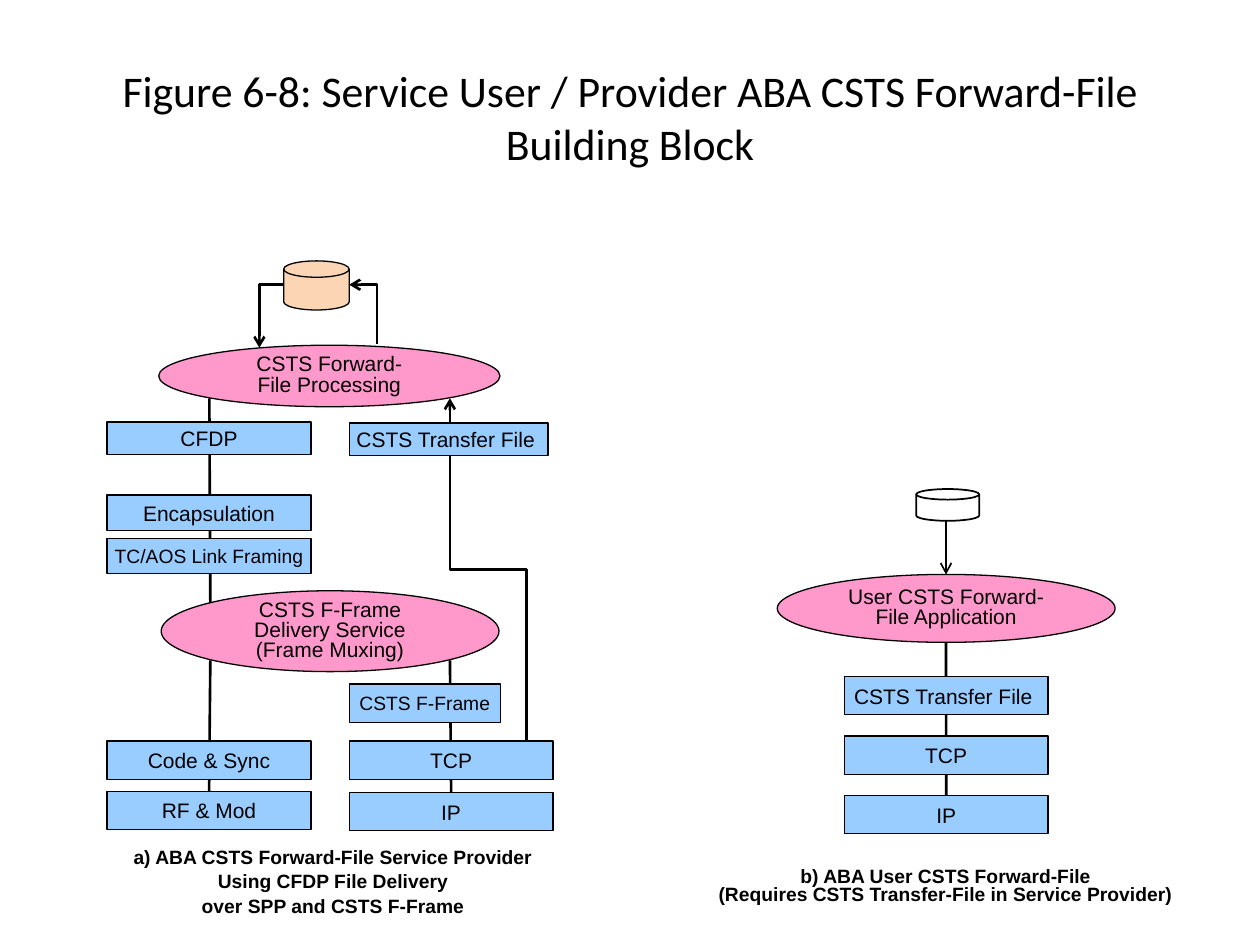
from lxml import etree
from pptx import Presentation
from pptx.dml.color import RGBColor
from pptx.enum import shapes, text
from pptx.oxml.ns import qn
from pptx.util import Cm, Pt

COLORS = {"black": "000000", "pink": "FF99CC", "blue": "99CCFF",
          "peach": "FCD5B5", "white": "FFFFFF"}

# Content; all lengths are centimetres
TITLE = "Figure 6-8: Service User / Provider ABA CSTS Forward-File Building Block"
CAPTIONS = [  # lines, area, line spacing
    (["a) ABA CSTS Forward-File Service Provider",
      "Using CFDP File Delivery\vover SPP and CSTS F-Frame"],
     (2.41, 16.87, 8.61, 1.75), Pt(14)),
    (["b) ABA User CSTS Forward-File",
      "(Requires CSTS Transfer-File in Service Provider)"],
     (14.2, 17.37, 9.73, 1.02), 0.8),
]
PROCESSES = [  # lines, area
    (["CSTS Forward-", "File Processing"], (3.2, 6.96, 6.88, 1.24)),
    (["CSTS F-Frame", "Delivery Service", "(Frame Muxing)"],
     (3.25, 11.91, 6.81, 1.63)),
    (["User CSTS Forward-", "File Application"], (15.67, 11.58, 6.81, 1.37)),
]
STORES = [  # area, fill, line width
    ((5.72, 5.26, 1.32, 0.99), "peach", 0.75),
    ((18.47, 9.86, 1.27, 0.64), "white", 1),
]
LEFT, MIDDLE, RIGHT = 2.16, 7.04, 17.02
WIDE, TALL = 4.11, 0.77
USER_TOP, USER_STEP = 13.64, 1.2
LAYERS = [  # key, label, x, y, width, height, text size
    ("cfdp", "CFDP", LEFT, 8.51, WIDE, 0.66, 12),
    ("encapsulation", "Encapsulation", LEFT, 9.98, WIDE, 0.71, 12),
    ("framing", "TC/AOS Link Framing", LEFT, 10.85, WIDE, 0.71, 11),
    ("coding", "Code & Sync", LEFT, 14.94, WIDE, TALL, 12),
    ("radio", "RF & Mod", LEFT, 15.95, WIDE, TALL, 12),
    ("transfer", "CSTS Transfer File ", MIDDLE, 8.53, 4.01, 0.66, 12),
    ("frame", "CSTS F-Frame", MIDDLE, 13.79, 3.05, TALL, 11),
    ("tcp", "TCP", MIDDLE, 14.94, WIDE, TALL, 12),
    ("ip", "IP", MIDDLE, 15.98, WIDE, TALL, 12),
] + [
    (f"user {label}", label, RIGHT, USER_TOP + row * USER_STEP, WIDE, TALL, 12)
    for row, label in enumerate(["CSTS Transfer File ", "TCP", "IP"])
]
SPINES = [  # start, layer whose top the line reaches
    ((4.24, 13.31), "radio"),
    ((9.07, 13.31), "ip"),
    ((19.07, 12.95), "user IP"),
]
CORNERS = [  # start, end, arrowhead position
    ((7.04, 5.74), (7.6, 6.93), "headEnd"),
    ((5.72, 5.74), (5.23, 7.01), "tailEnd"),
]
TRANSFER_ROUTE = ((9.07, 8.03), (10.62, 14.94))

deck = Presentation()
deck.slide_width, deck.slide_height = Cm(25.4), Cm(19.05)
page = deck.slides.add_slide(deck.slide_layouts[6])
tree = page.shapes._spTree


def color(name):
    return RGBColor.from_string(COLORS[name])


def write(box, lines, size=12, font="Arial", bold=False, spacing=None,
          margins=None, wrap=True):
    frame = box.text_frame
    frame.word_wrap = wrap
    frame.vertical_anchor = text.MSO_ANCHOR.MIDDLE
    if margins:
        frame.margin_left = frame.margin_right = Cm(margins[0])
        frame.margin_top = frame.margin_bottom = Cm(margins[1])
    for index, line in enumerate(lines):
        para = frame.add_paragraph() if index else frame.paragraphs[0]
        para.text = line
        para.alignment = text.PP_ALIGN.CENTER
        para.line_spacing = spacing
        for span in para.runs:
            span.font.size, span.font.name = Pt(size), font
            span.font.bold = bold
            span.font.color.rgb = color("black")


def add_text(lines, area, **style):
    write(page.shapes.add_textbox(*map(Cm, area)), lines, **style)


def add_block(kind, area, fill, width=0.75):
    box = page.shapes.add_shape(kind, *map(Cm, area))
    box.shadow.inherit = False
    box.fill.solid()
    box.fill.fore_color.rgb = color(fill)
    box.line.color.rgb = color("black")
    box.line.width = Pt(width)
    return box


def add_line(start, end, kind=shapes.MSO_CONNECTOR.STRAIGHT, width=1.5,
             arrow=None):
    line = page.shapes.add_connector(kind, *map(Cm, start + end))
    line.line.color.rgb = color("black")
    line.line.width = Pt(width)
    properties = line._element.spPr
    if arrow:
        etree.SubElement(properties.find(qn("a:ln")), qn(f"a:{arrow}"),
                         type="arrow")
    etree.SubElement(properties, qn("a:effectLst"))
    tree.insert(2, line._element)  # lines run behind the blocks
    return line


def add_corner(start, end, arrow):
    line = add_line(start, end, shapes.MSO_CONNECTOR.ELBOW, arrow=arrow)
    line._element.spPr.find(qn("a:prstGeom")).set("prst", "bentConnector2")


def add_vertical_elbow(start, end, arrow):
    """Elbow that leaves and arrives vertically: a quarter-turned connector."""
    (x1, y1), (x2, y2) = start, end
    middle_x, middle_y = (x1 + x2) / 2, (y1 + y2) / 2
    half_run, half_rise = (y2 - y1) / 2, (x2 - x1) / 2
    line = add_line((middle_x + half_run, middle_y - half_rise),
                    (middle_x - half_run, middle_y + half_rise),
                    shapes.MSO_CONNECTOR.ELBOW, arrow=arrow)
    line._element.spPr.find(qn("a:xfrm")).set("rot", str(270 * 60000))


# Title and captions
add_text([TITLE], (1.27, 0.76, 22.86, 3.18), size=25, font="Calibri")
for lines, area, spacing in CAPTIONS:
    add_text(lines, area, size=11, bold=True, spacing=spacing, wrap=False)

# Processes, file stores and protocol layers
for lines, area in PROCESSES:
    oval = add_block(shapes.MSO_SHAPE.OVAL, area, "pink")
    write(oval, lines, spacing=0.8, margins=(0, 0))
for area, fill, width in STORES:
    add_block(shapes.MSO_SHAPE.FLOWCHART_MAGNETIC_DISK, area, fill, width)
layers = {}
for key, label, x, y, wide, tall, size in LAYERS:
    layers[key] = add_block(shapes.MSO_SHAPE.RECTANGLE, (x, y, wide, tall), "blue")
    write(layers[key], [label], size=size, margins=(0.1, 0.08))

# Lines and arrows
for start, target in SPINES:
    add_line(start, start).end_connect(layers[target], 0)
add_line((4.22, 8.03), (4.24, 12.17))
add_line((19.07, 11.58), (19.07, 10.49), width=1, arrow="headEnd")
for start, end, arrow in CORNERS:
    add_corner(start, end, arrow)
add_vertical_elbow(*TRANSFER_ROUTE, "headEnd")

deck.save("out.pptx")
